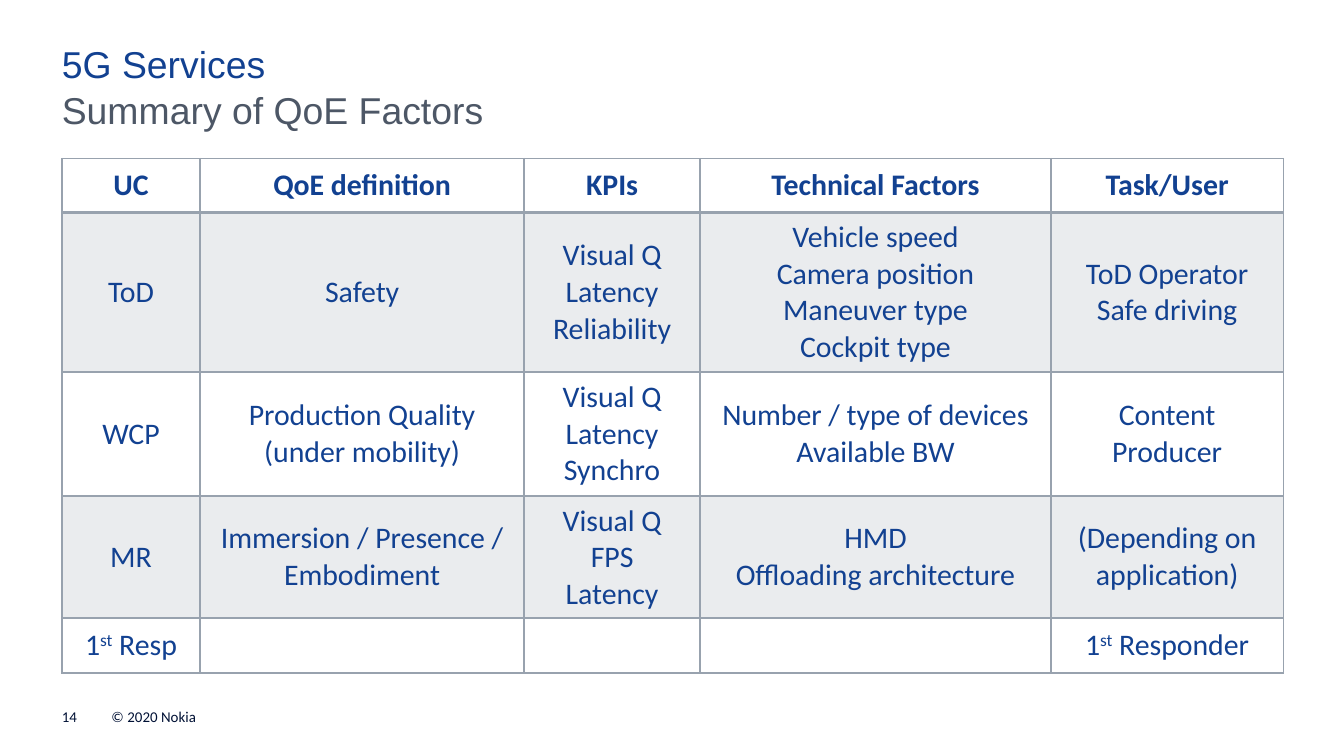
from lxml.etree import SubElement
from pptx import Presentation
from pptx.dml.color import RGBColor
from pptx.enum.text import MSO_ANCHOR, PP_ALIGN
from pptx.oxml.ns import qn
from pptx.util import Inches, Pt

COLORS = {"blue": "124191", "gray": "4D5766", "navy": "001135", "line": "98A2AE"}

LEFT, WIDTH = 0.46, 9.09

# text, (left, top, width, height), format
TEXTS = [
    ("5G Services", (LEFT, 0.31, WIDTH, 0.34),
     dict(size=20, font="Arial", color="blue")),
    ("Summary of QoE Factors", (LEFT, 0.65, WIDTH, 0.34),
     dict(size=20, font="Arial", color="gray")),
    ("14", (LEFT, 5.27, 0.28, 0.13), dict(size=8, color="navy")),
    ("© 2020 Nokia", (0.83, 5.27, 1.97, 0.13), dict(size=8, color="navy")),
]

# Each line is a paragraph; text between carets is superscript
ROWS = [
    ["UC", "QoE definition", "KPIs", "Technical Factors", "Task/User"],
    ["ToD", "Safety", "Visual Q\nLatency\nReliability",
     "Vehicle speed\nCamera position\nManeuver type\nCockpit type",
     "ToD Operator\nSafe driving"],
    ["WCP", "Production Quality\n(under mobility)", "Visual Q\nLatency\nSynchro",
     "Number / type of devices\nAvailable BW", "Content Producer"],
    ["MR", "Immersion / Presence / Embodiment", "Visual Q\nFPS\nLatency",
     "HMD\nOffloading architecture", "(Depending on application)"],
    ["1^st^ Resp", "", "", "", "1^st^ Responder"],
]
COL_WIDTHS = [1.03, 2.41, 1.31, 2.61, 1.73]
ROW_HEIGHTS = [0.4, 1.19, 0.92, 0.91, 0.41]


def write(tf, text, size=16, font="Calibri", color="blue", bold=False,
          align=PP_ALIGN.LEFT):
    for i, line in enumerate(text.split("\n")):
        p = tf.add_paragraph() if i else tf.paragraphs[0]
        p.alignment = align
        p.font.size = Pt(size)
        for j, part in enumerate(line.split("^")):
            if not part:
                continue
            r = p.add_run()
            r.text = part
            r.font.size = Pt(size)
            r.font.name = font
            r.font.bold = bold
            r.font.color.rgb = RGBColor.from_string(COLORS[color])
            if j % 2:
                r.font._element.set("baseline", "30000")


def add_text(s, text, box, **fmt):
    tf = s.shapes.add_textbox(*map(Inches, box)).text_frame
    tf.word_wrap = True
    tf.margin_left = tf.margin_top = tf.margin_right = tf.margin_bottom = 0
    if fmt["size"] < 10:
        tf.vertical_anchor = MSO_ANCHOR.BOTTOM
    write(tf, text, **fmt)


def set_borders(cell, **widths):
    """Draw the four cell edges, 1 pt unless L, R, T or B says otherwise."""
    tcPr = cell._tc.get_or_add_tcPr()
    for side in "LRTB":
        ln = SubElement(tcPr, qn(f"a:ln{side}"), w=str(Pt(widths.get(side, 1))))
        SubElement(SubElement(ln, qn("a:solidFill")), qn("a:srgbClr"),
                   val=COLORS["line"])


def tint(cell, percent):
    cell.fill.solid()
    cell.fill.fore_color.rgb = RGBColor.from_string(COLORS["line"])
    color = cell._tc.tcPr.find(qn("a:solidFill")).find(qn("a:srgbClr"))
    SubElement(color, qn("a:alpha"), val=str(percent * 1000))


def add_factor_table(s):
    table = s.shapes.add_table(
        len(ROWS), len(COL_WIDTHS), Inches(LEFT), Inches(1.18),
        Inches(WIDTH), Inches(sum(ROW_HEIGHTS))).table
    table.first_row = table.horz_banding = False
    for col, width in zip(table.columns, COL_WIDTHS):
        col.width = Inches(width)
    for i, (row, height) in enumerate(zip(table.rows, ROW_HEIGHTS)):
        row.height = Inches(height)
        for cell, text in zip(row.cells, ROWS[i]):
            cell.vertical_anchor = MSO_ANCHOR.MIDDLE
            write(cell.text_frame, text, bold=i == 0, align=PP_ALIGN.CENTER)
            set_borders(cell, T=2 if i == 1 else 1, B=2 if i == 0 else 1)
            if i % 2:
                tint(cell, 20)
            else:
                cell.fill.background()


def main():
    prs = Presentation()
    prs.slide_width = Inches(10)
    prs.slide_height = prs.slide_width * 9 // 16
    s = prs.slides.add_slide(prs.slide_layouts[6])
    for text, box, fmt in TEXTS:
        add_text(s, text, box, **fmt)
    add_factor_table(s)
    prs.save("out.pptx")


if __name__ == "__main__":
    main()
